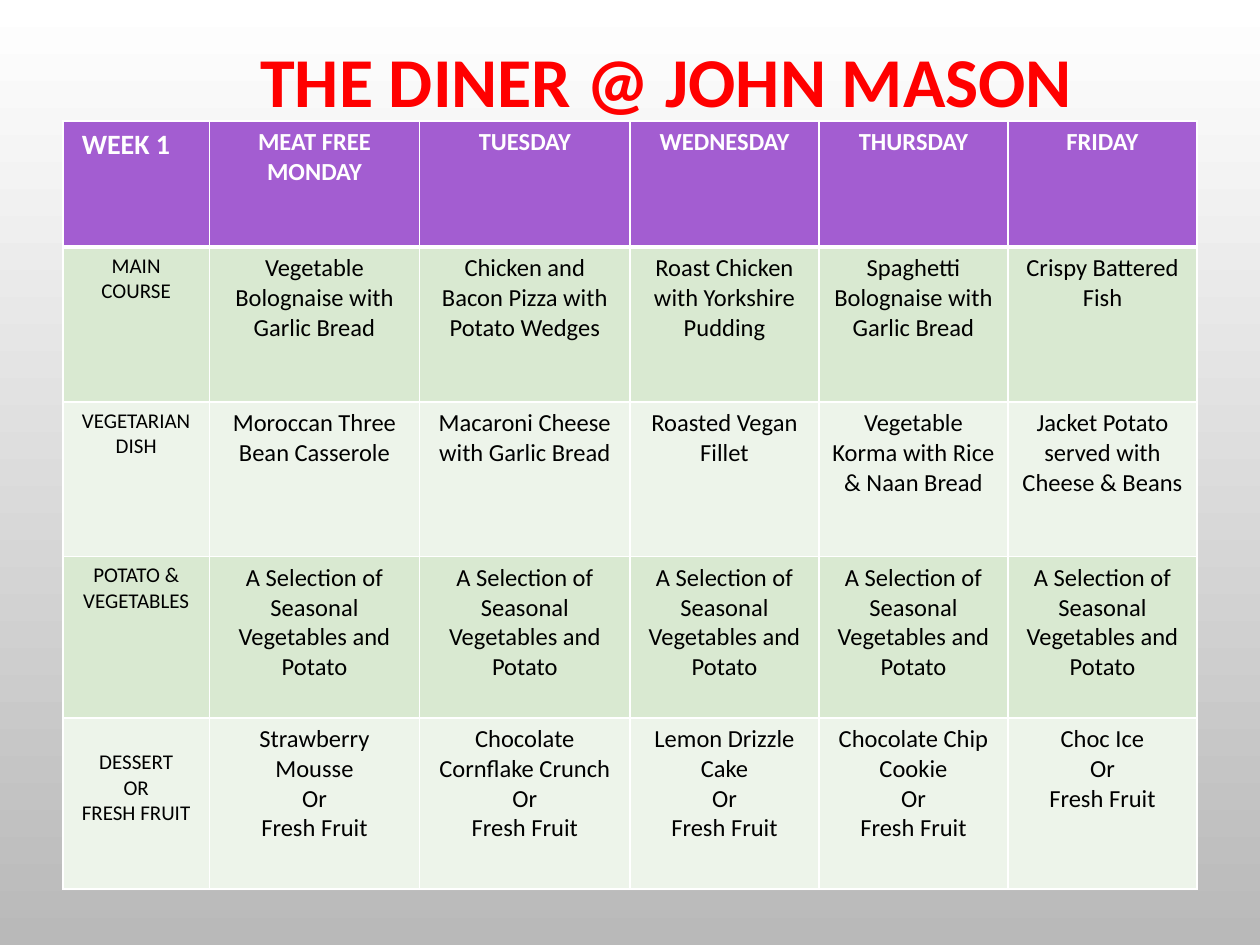
from lxml.etree import SubElement
from pptx import Presentation
from pptx.dml.color import RGBColor
from pptx.enum.text import MSO_ANCHOR, PP_ALIGN
from pptx.oxml.ns import qn
from pptx.util import Cm, Pt

FONT = "Calibri"
COLORS = {
    "title": "FF0000",
    "header": "A35DD1",
    "band_dark": "D9E9D1",
    "band_light": "EDF4EA",
    "white": "FFFFFF",
    "black": "000000",
    "page_bottom": "B9B9B9",
}

COLUMN_WIDTHS = [2.95, 4.24, 4.24, 3.81, 3.81, 3.81]
ROW_HEIGHTS = [2.54, 3.12, 3.12, 3.25, 3.45]
SELECTION = "A Selection of Seasonal Vegetables and Potato"

# One row per course; a line break starts a new paragraph
MENU = [
    ["WEEK 1", "MEAT FREE MONDAY", "TUESDAY", "WEDNESDAY", "THURSDAY", "FRIDAY"],
    ["MAIN\nCOURSE", "Vegetable Bolognaise with Garlic Bread",
     "Chicken and Bacon Pizza with Potato Wedges",
     "Roast Chicken with Yorkshire Pudding",
     "Spaghetti Bolognaise with Garlic Bread", "Crispy Battered Fish"],
    ["VEGETARIAN DISH", "Moroccan Three Bean Casserole",
     "Macaroni Cheese with Garlic Bread", "Roasted Vegan Fillet",
     "Vegetable Korma with Rice & Naan Bread",
     "Jacket Potato served with Cheese & Beans"],
    ["POTATO & VEGETABLES"] + [SELECTION] * 5,
    ["DESSERT\nOR\nFRESH FRUIT"] + [
        f"{dessert}\nOr\nFresh Fruit"
        for dessert in ("Strawberry Mousse", "Chocolate Cornflake Crunch",
                        "Lemon Drizzle Cake", "Chocolate Chip Cookie", "Choc Ice")
    ],
]


def rgb(name):
    return RGBColor.from_string(COLORS[name])


def write_text(frame, text, size, color, bold=False, align=PP_ALIGN.CENTER):
    frame.word_wrap = True
    for index, line in enumerate(text.split("\n")):
        para = frame.add_paragraph() if index else frame.paragraphs[0]
        para.add_run().text = line
        para.alignment = align
        para.font.name = FONT
        para.font.size = Pt(size)
        para.font.bold = bold
        para.font.color.rgb = rgb(color)


def paint_background(page):
    fill = page.background.fill
    fill.gradient()
    fill.gradient_angle = 270
    for stop, name in zip(fill.gradient_stops, ("white", "page_bottom")):
        stop.color.rgb = rgb(name)


def add_title(page, text):
    box = page.shapes.add_textbox(Cm(-0.64), Cm(0.89), Cm(28.14), Cm(1.7))
    write_text(box.text_frame, text, 40, "title", bold=True)
    box.text_frame.vertical_anchor = MSO_ANCHOR.BOTTOM
    box.text_frame.paragraphs[0].line_spacing = 0.9


def set_borders(cell, top=1, bottom=1):
    properties = cell._tc.get_or_add_tcPr()
    for side, width in (("L", 1), ("R", 1), ("T", top), ("B", bottom)):
        line = SubElement(properties, qn(f"a:ln{side}"), w=str(Pt(width)))
        fill = SubElement(line, qn("a:solidFill"))
        SubElement(fill, qn("a:srgbClr"), val=COLORS["white"])


def style_cell(cell, text, row, column):
    # The header rule is thicker than the rest of the grid
    set_borders(cell, top=3 if row == 1 else 1, bottom=3 if row == 0 else 1)
    cell.fill.solid()
    if row == 0:
        cell.fill.fore_color.rgb = rgb("header")
        corner = column == 0
        write_text(cell.text_frame, text, 16 if corner else 14, "white", True,
                   PP_ALIGN.LEFT if corner else PP_ALIGN.CENTER)
    else:
        cell.fill.fore_color.rgb = rgb("band_dark" if row % 2 else "band_light")
        write_text(cell.text_frame, text, 12 if column == 0 else 14, "black")


def add_menu(page):
    frame = page.shapes.add_table(
        len(MENU), len(COLUMN_WIDTHS), Cm(1.27), Cm(2.44),
        Cm(sum(COLUMN_WIDTHS)), Cm(sum(ROW_HEIGHTS)))
    table = frame.table
    table.horz_banding = False
    for column, width in zip(table.columns, COLUMN_WIDTHS):
        column.width = Cm(width)
    for row, height in zip(table.rows, ROW_HEIGHTS):
        row.height = Cm(height)
    for row, texts in enumerate(MENU):
        for column, text in enumerate(texts):
            style_cell(table.cell(row, column), text, row, column)

    # Inset the week label and lower the dessert label
    table.cell(0, 0).margin_left = Cm(0.38)
    table.cell(len(MENU) - 1, 0).margin_top = Cm(0.64)


def main():
    deck = Presentation()
    deck.slide_width, deck.slide_height = Cm(25.4), Cm(19.05)
    page = deck.slides.add_slide(deck.slide_layouts[6])
    paint_background(page)
    add_title(page, "THE DINER @ JOHN MASON")
    add_menu(page)
    deck.save("out.pptx")


if __name__ == "__main__":
    main()
